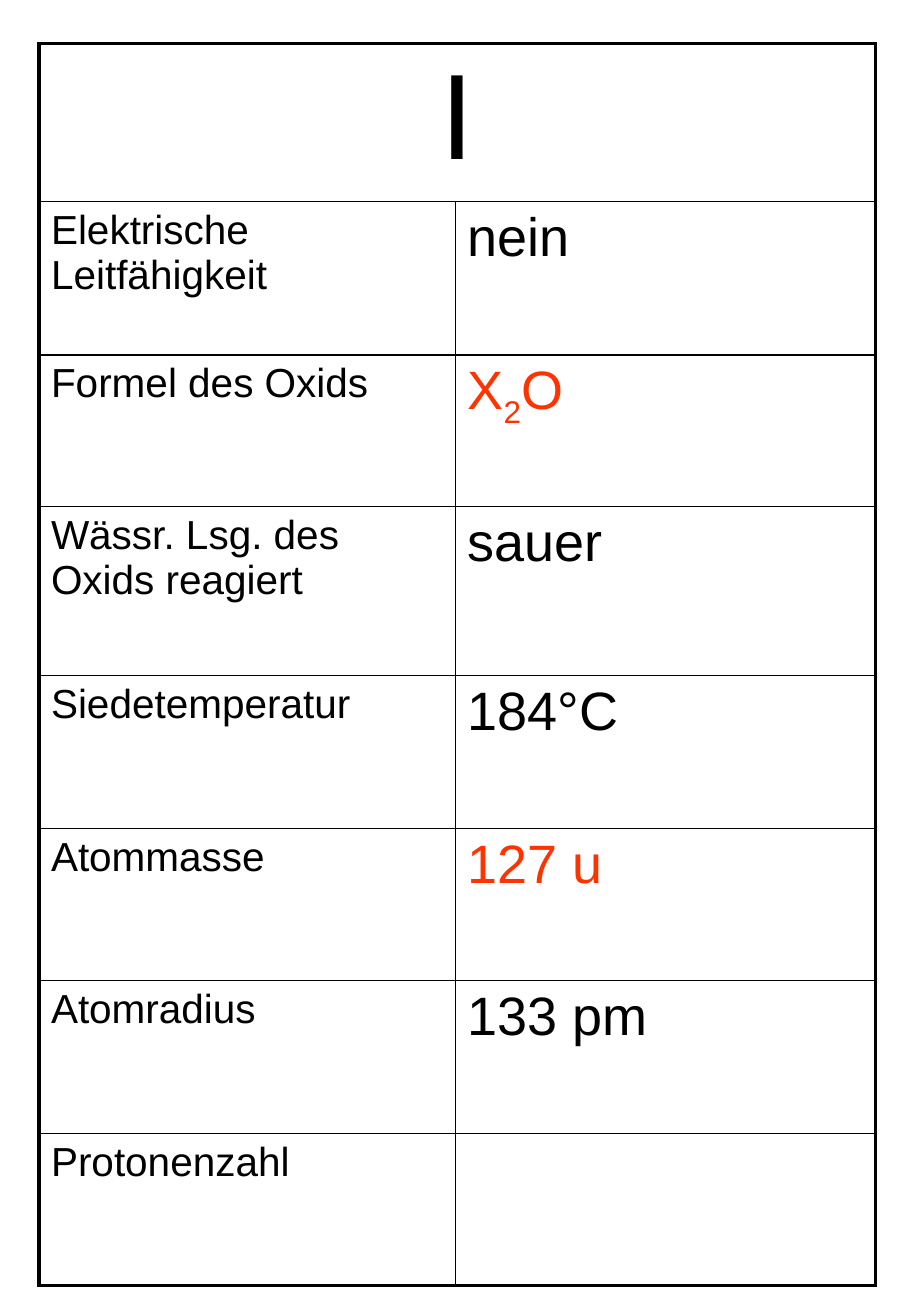
from lxml import etree
from pptx import Presentation
from pptx import util as u
from pptx.dml.color import RGBColor
from pptx.enum import text
from pptx.oxml.ns import qn

PX = 9144  # EMU, 100 px to the inch
COLORS = {"black": "000000", "red": "FF3300"}
TABLE_BOX = (32, 36, 689, 1022)
COLUMN_WIDTHS = (343, 346)
ROW_HEIGHTS = (130, 126, 125, 139, 126, 125, 126, 125)
OUTER, INNER = 2.25, 1

SYMBOL = "I"
# label, runs of the value (text, subscript), colour
PROPERTIES = (
    ("Elektrische Leitfähigkeit", [("nein", False)], "black"),
    ("Formel des Oxids", [("X", False), ("2", True), ("O", False)], "red"),
    ("Wässr. Lsg. des Oxids reagiert", [("sauer", False)], "black"),
    ("Siedetemperatur", [("184°C", False)], "black"),
    ("Atommasse", [("127 u", False)], "red"),
    ("Atomradius", [("133 pm", False)], "black"),
    ("Protonenzahl", [], "black"),
)


def px(length):
    return u.Emu(length * PX)


def add_text(cell, content, size, color="black", subscript=False, align=text.PP_ALIGN.LEFT):
    paragraph = cell.text_frame.paragraphs[0]
    paragraph.alignment = align
    run = paragraph.add_run()
    run.text = content
    run.font.name = "Arial"
    run.font.size = u.Pt(size)
    run.font.color.rgb = RGBColor.from_string(COLORS[color])
    if subscript:
        run.font._element.set("baseline", "-25000")


def set_borders(cell, **widths):
    """Draw cell borders; widths in points are keyed L, R, T and B."""
    properties = cell._tc.get_or_add_tcPr()
    for position, side in enumerate("LRTB"):
        line = etree.Element(qn(f"a:ln{side}"), w=str(u.Pt(widths[side])))
        fill = etree.SubElement(line, qn("a:solidFill"))
        etree.SubElement(fill, qn("a:srgbClr"), val=COLORS["black"])
        properties.insert(position, line)


def format_grid(table):
    last_row, last_column = len(ROW_HEIGHTS) - 1, len(COLUMN_WIDTHS) - 1
    for row in range(last_row + 1):
        for column in range(last_column + 1):
            cell = table.cell(row, column)
            cell.fill.background()
            set_borders(
                cell,
                L=OUTER if column == 0 else INNER,
                R=OUTER if column == last_column or row == 0 else INNER,
                T=OUTER if row == 0 else INNER,
                B=OUTER if row == last_row else INNER,
            )


def add_element_table(slide, box):
    frame = slide.shapes.add_table(
        len(ROW_HEIGHTS), len(COLUMN_WIDTHS), *(px(length) for length in box)
    )
    table = frame.table
    table.first_row = table.horz_banding = False
    for column, width in zip(table.columns, COLUMN_WIDTHS):
        column.width = px(width)
    for row, height in zip(table.rows, ROW_HEIGHTS):
        row.height = px(height)
    format_grid(table)

    heading = table.cell(0, 0)
    heading.merge(table.cell(0, 1))
    add_text(heading, SYMBOL, 72, align=text.PP_ALIGN.CENTER)
    for row, (label, value, color) in enumerate(PROPERTIES, start=1):
        add_text(table.cell(row, 0), label, 24)
        for content, subscript in value:
            add_text(table.cell(row, 1), content, 32, color=color, subscript=subscript)


def main():
    presentation = Presentation()
    presentation.slide_width, presentation.slide_height = px(750), px(1083)
    slide = presentation.slides.add_slide(presentation.slide_layouts[6])
    add_element_table(slide, TABLE_BOX)
    presentation.save("out.pptx")


if __name__ == "__main__":
    main()
